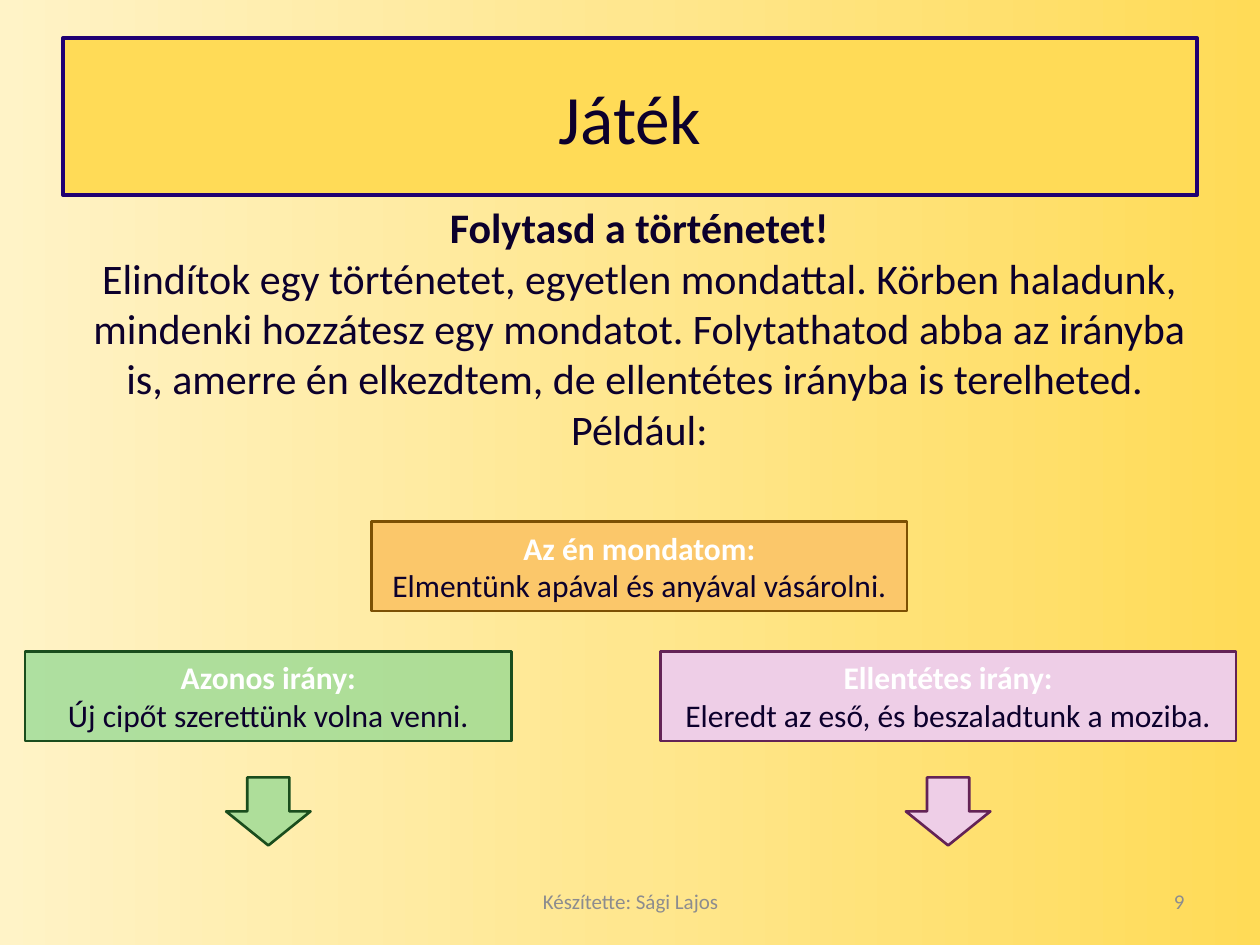
from copy import deepcopy
from dataclasses import dataclass

from lxml import etree
from pptx import Presentation
from pptx.dml.color import RGBColor
from pptx.enum.shapes import MSO_SHAPE
from pptx.enum.text import MSO_ANCHOR, MSO_AUTO_SIZE, PP_ALIGN
from pptx.oxml.ns import qn
from pptx.util import Inches, Pt

RECT, ARROW = MSO_SHAPE.RECTANGLE, MSO_SHAPE.DOWN_ARROW
CENTER, RIGHT = PP_ALIGN.CENTER, PP_ALIGN.RIGHT
TOP, MIDDLE = MSO_ANCHOR.TOP, MSO_ANCHOR.MIDDLE
NO_FIT = MSO_AUTO_SIZE.NONE


@dataclass(frozen=True)
class Theme:
    font: str = "Calibri"
    ink: str = "0C002C"
    white: str = "FFFFFF"
    gray: str = "8C8C8F"
    # Each paint is fill, line, opacity in percent
    gold: tuple = ("FFDB57", "1F0072", 100)
    orange: tuple = ("FBC76A", "7C5003", 100)
    green: tuple = ("90D993", "1A4D1D", 73)
    pink: tuple = ("EECEE7", "632356", 100)
    back: tuple = ((0, "FFF3C7"), (0.5, "FFE78F"), (1, "FFDB57"))
    head: float = 39.6
    body: int = 24
    card: int = 18
    foot: int = 12


THEME = Theme()


def rgb(code):
    return RGBColor.from_string(code)


def place(shape, left, top, width, height):
    shape.left, shape.top = Inches(left), Inches(top)
    shape.width, shape.height = Inches(width), Inches(height)


def paint(shape, look, width):
    fill, line, alpha = look
    shape.shadow.inherit = False
    shape.fill.solid()
    shape.fill.fore_color.rgb = rgb(fill)
    if alpha < 100:
        color = shape.fill._xPr.find(".//" + qn("a:srgbClr"))
        etree.SubElement(color, qn("a:alpha"), val=str(alpha * 1000))
    shape.line.color.rgb = rgb(line)
    shape.line.width = Pt(width)


def write(shape, lines, size, align=CENTER, anchor=MIDDLE):
    """Fill a shape with (text, color, bold) lines, one paragraph each."""
    frame = shape.text_frame
    frame.word_wrap = True
    frame.auto_size = NO_FIT
    frame.vertical_anchor = anchor
    for i, (text, color, bold) in enumerate(lines):
        para = frame.add_paragraph() if i else frame.paragraphs[0]
        para.alignment = align
        para.space_before = Pt(0)
        run = para.add_run()
        run.text = text
        font = run.font
        font.name, font.size, font.bold = THEME.font, Pt(size), bold
        font.color.rgb = rgb(color)


def clear_bullets(shape):
    for para in shape.text_frame.paragraphs:
        props = para._p.get_or_add_pPr()
        props.set("marL", "0")
        props.set("indent", "0")
        etree.SubElement(props, qn("a:buNone"))


def set_back(slide):
    fill = slide.background.fill
    fill.gradient()
    fill.gradient_angle = 0
    stops = slide._element.find(".//" + qn("a:gsLst"))
    stops.append(deepcopy(stops[-1]))
    for stop, (spot, color) in zip(fill.gradient_stops, THEME.back):
        stop.position = spot
        stop.color.rgb = rgb(color)


def add_shape(slide, kind, box, look):
    shape = slide.shapes.add_shape(kind, *map(Inches, box))
    paint(shape, look, 1.5)
    return shape


def add_card(slide, box, look, label, text):
    card = add_shape(slide, RECT, box, look)
    lines = [(label, THEME.white, True), (text, THEME.ink, False)]
    write(card, lines, THEME.card)


def add_branch(slide, left, width, look, label, text):
    """A card with a down arrow centred below it."""
    add_card(slide, (left, 5.17, width, 0.71), look, label, text)
    span = 0.67
    mid = left + width / 2
    add_shape(slide, ARROW, (mid - span / 2, 6.17, span, 0.54), look)


def add_foot(slide, left, width, text, align):
    box = slide.shapes.add_textbox(*map(Inches, (left, 6.95, width, 0.4)))
    write(box, [(text, THEME.gray, False)], THEME.foot, align)


def main():
    deck = Presentation()
    deck.slide_width, deck.slide_height = Inches(10), Inches(7.5)
    slide = deck.slides.add_slide(deck.slide_layouts[1])
    set_back(slide)

    # Title
    title = slide.shapes.title
    place(title, 0.5, 0.3, 9, 1.25)
    paint(title, THEME.gold, 2)
    write(title, [("Játék", THEME.ink, False)], THEME.head)

    # Rules of the game
    body = slide.placeholders[1]
    place(body, 0.51, 1.55, 9.13, 2.12)
    write(body, [
        ("Folytasd a történetet!", THEME.ink, True),
        ("Elindítok egy történetet, egyetlen mondattal. Körben haladunk, "
         "mindenki hozzátesz egy mondatot. Folytathatod abba az irányba is, "
         "amerre én elkezdtem, de ellentétes irányba is terelheted. ",
         THEME.ink, False),
        ("Például:", THEME.ink, False),
    ], THEME.body, anchor=TOP)
    clear_bullets(body)

    # Opening sentence and its two ways on
    add_card(slide, (2.95, 4.14, 4.25, 0.71), THEME.orange,
             "Az én mondatom:", "Elmentünk apával és anyával vásárolni.")
    add_branch(slide, 0.2, 3.86, THEME.green,
               "Azonos irány:", "Új cipőt szerettünk volna venni.")
    add_branch(slide, 5.24, 4.57, THEME.pink,
               "Ellentétes irány:", "Eleredt az eső, és beszaladtunk a moziba.")

    # Footer
    add_foot(slide, 3.42, 3.17, "Készítette: Sági Lajos", CENTER)
    add_foot(slide, 7.17, 2.33, "9", RIGHT)

    deck.save("out.pptx")


if __name__ == "__main__":
    main()
